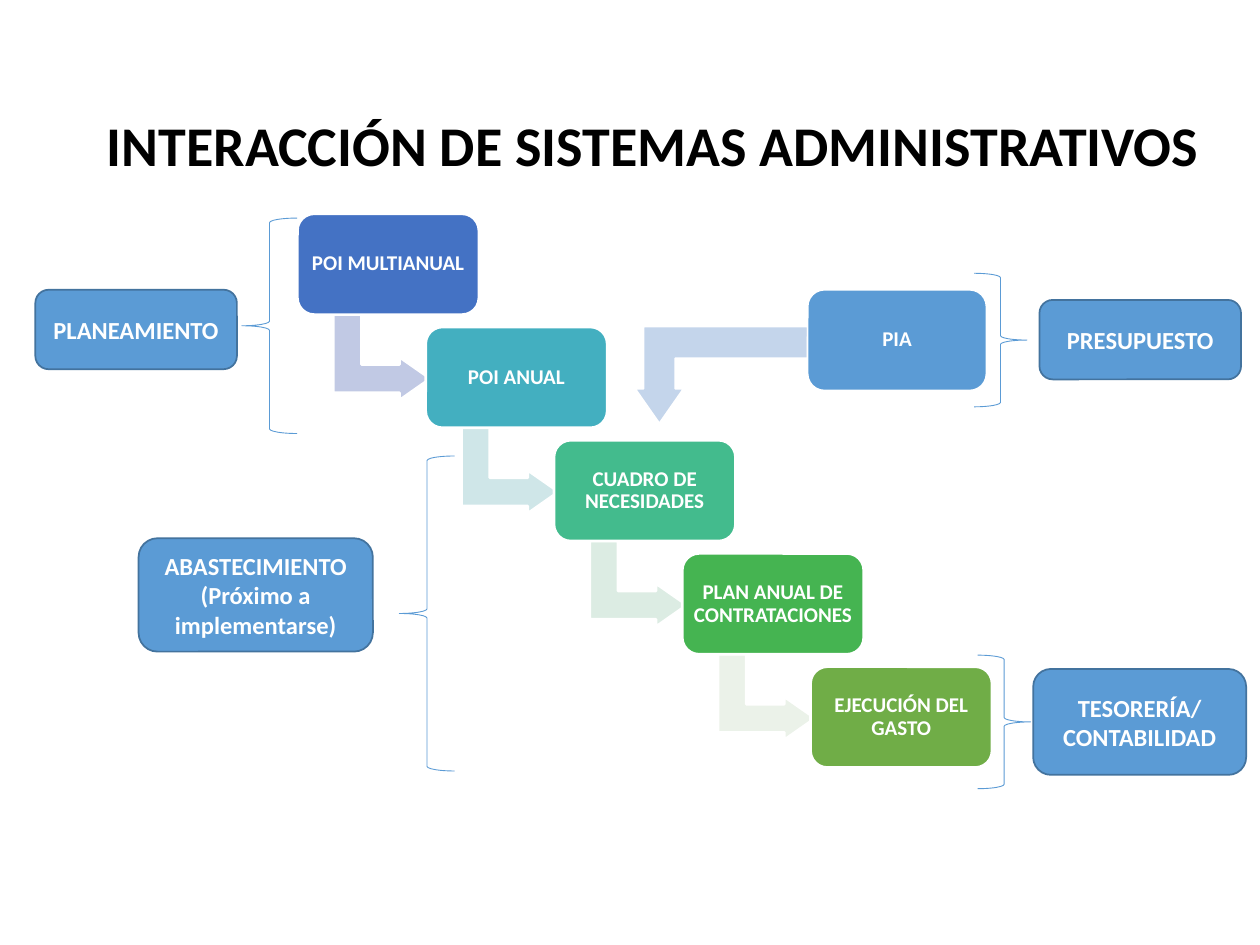
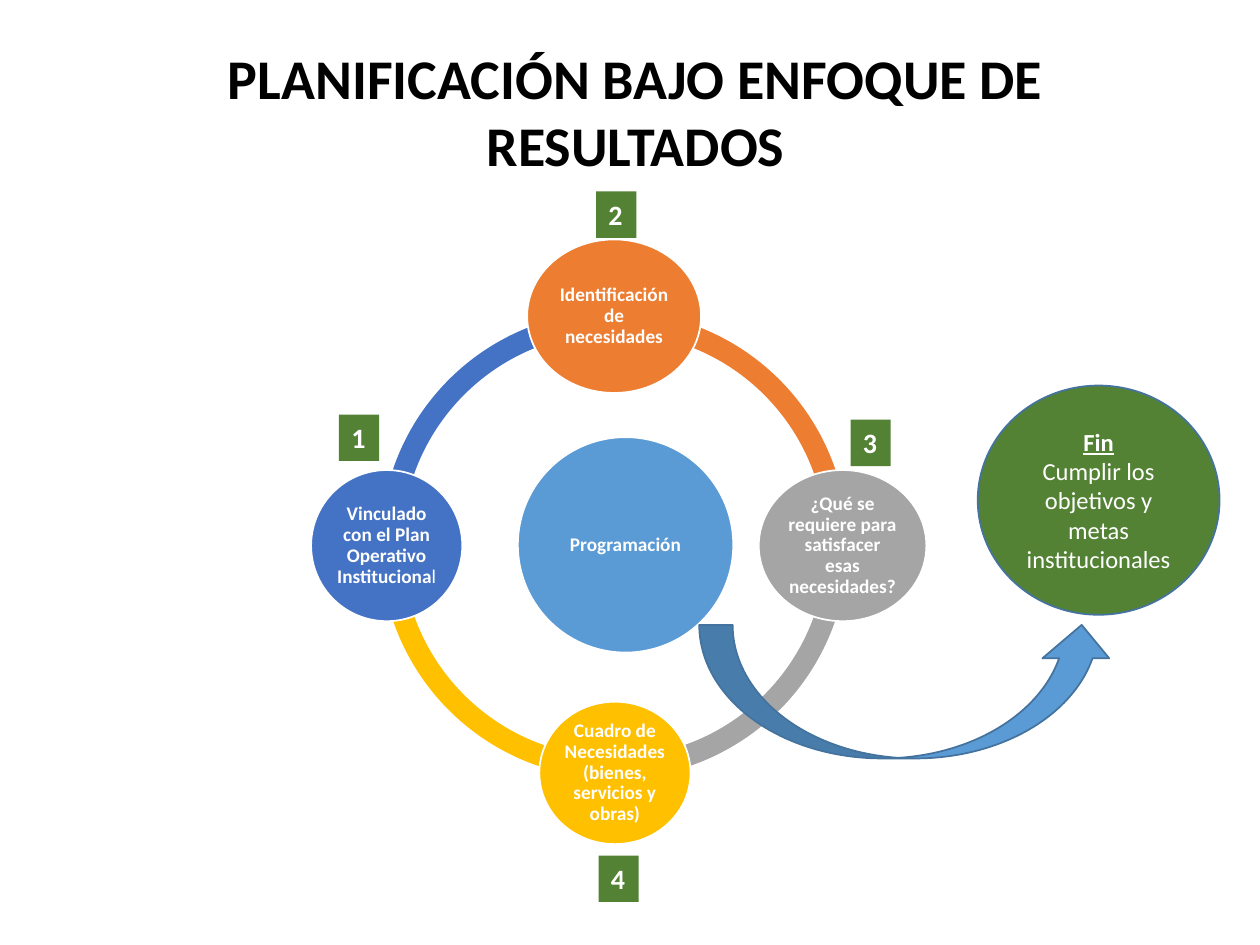
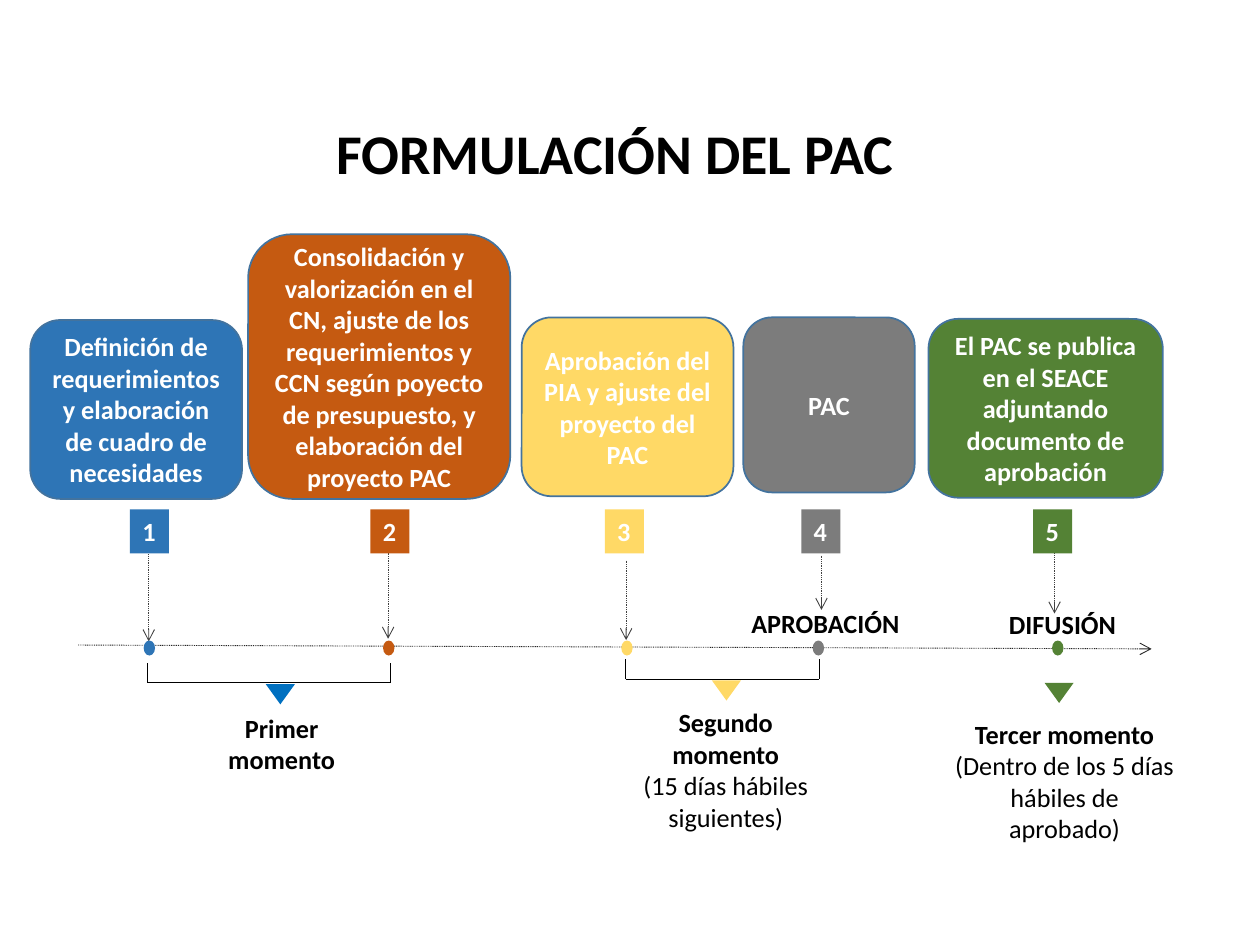
import dataclasses
from typing import Any, NamedTuple, Optional, Sequence, Union

import lxml.etree
import pptx
import pptx.dml.color
import pptx.enum.dml
import pptx.enum.shapes
import pptx.enum.text
import pptx.oxml.ns
import pptx.util

KIND = pptx.enum.shapes.MSO_SHAPE
ALIGN = pptx.enum.text.PP_ALIGN
ANCHOR = pptx.enum.text.MSO_ANCHOR
FIT = pptx.enum.text.MSO_AUTO_SIZE


@dataclasses.dataclass(frozen=True)
class Theme:
    font: str = "Calibri"
    black: str = "000000"
    white: str = "FFFFFF"
    sky: str = "5B9BD5"
    edge: str = "43739E"
    blue: str = "4472C4"
    teal: str = "43AFC0"
    mint: str = "43BB8D"
    leaf: str = "45B451"
    grass: str = "70AD47"
    orange: str = "ED7D31"
    gold: str = "FFC000"
    grey: str = "A5A5A5"
    green: str = "548235"
    navy: str = "2E75B6"
    rust: str = "C55A11"
    sand: str = "FFD966"
    stone: str = "7C7C7C"
    azure: str = "0070C0"
    axis: str = "262626"
    drop: str = "404040"
    pale_blue: str = "C4D5EB"
    pales: tuple = ("C1C9E4", "CFE6E8", "DCECE3", "EBF2E9")
    title: float = 32
    badge: float = 16
    body: float = 15
    group: float = 14
    node: float = 12
    ring: float = 11


T = Theme()


class Box(NamedTuple):
    x: float
    y: float
    w: float
    h: float


class Run(NamedTuple):
    text: str
    bold: bool = True
    under: bool = False


Text = Union[str, Sequence[Sequence[Run]]]


@dataclasses.dataclass(frozen=True)
class Style:
    size: float
    color: str = T.white
    align: Any = ALIGN.CENTER
    anchor: Any = ANCHOR.MIDDLE
    fit: Any = FIT.NONE
    wrap: bool = True
    space: float = 1.0
    pad: tuple = (7.2, 3.6)


TITLE = Style(T.title, T.black, anchor=ANCHOR.BOTTOM)
GROUP = Style(T.group)
NODE = Style(T.node, space=0.9, pad=(3.6, 3.6))
RING = Style(T.ring, space=0.9, pad=(1.44, 1.44))
STEP = Style(T.body)
NOTE = Style(T.body, T.black, anchor=ANCHOR.TOP, fit=FIT.SHAPE_TO_FIT_TEXT)
LABEL = dataclasses.replace(NOTE, align=ALIGN.LEFT, wrap=False)
BADGE = dataclasses.replace(LABEL, size=T.badge, color=T.white)
MARK = dataclasses.replace(BADGE, size=T.body)


class Step(NamedTuple):
    text: str
    fill: str
    box: Box
    badge: float
    dot: float
    drop: tuple[float, float, float]


class Moment(NamedTuple):
    text: Text
    fill: str
    box: Box
    tip: tuple[float, float]
    span: Optional[tuple[float, float, float]] = None


def tint(color: str) -> pptx.dml.color.RGBColor:
    return pptx.dml.color.RGBColor.from_string(color)


def format_all(item: Any, values: dict[str, Any]) -> None:
    for key, value in values.items():
        setattr(item, key, value)


def place(item: Any, box: Box) -> None:
    names = ("left", "top", "width", "height")
    format_all(item, {n: pptx.util.Pt(v) for n, v in zip(names, box)})


def write(shape: Any, text: Text, style: Style) -> None:
    frame = shape.text_frame
    side, end = map(pptx.util.Pt, style.pad)
    format_all(frame, {
        "word_wrap": style.wrap, "auto_size": style.fit,
        "vertical_anchor": style.anchor,
        "margin_left": side, "margin_right": side,
        "margin_top": end, "margin_bottom": end,
    })
    paras = [[Run(text)]] if isinstance(text, str) else text
    for i, runs in enumerate(paras):
        para = frame.add_paragraph() if i else frame.paragraphs[0]
        format_all(para, {"alignment": style.align, "line_spacing": style.space})
        for part in runs:
            run = para.add_run()
            run.text = part.text
            format_all(run.font, {
                "name": T.font, "size": pptx.util.Pt(style.size),
                "bold": part.bold, "underline": part.under,
            })
            run.font.color.rgb = tint(style.color)


def draw(slide: Any, kind: Any, box: Box, fill: Optional[str] = None,
         line: Optional[str] = None, width: float = 1, turn: float = 0,
         adjust: Sequence[float] = (), text: Text = "",
         style: Style = GROUP) -> None:
    shape = slide.shapes.add_shape(kind, *map(pptx.util.Pt, box))
    shape.shadow.inherit = False
    shape.rotation = turn
    for i, value in enumerate(adjust):
        shape.adjustments[i] = value
    if fill:
        shape.fill.solid()
        shape.fill.fore_color.rgb = tint(fill)
    else:
        shape.fill.background()
    if line:
        shape.line.color.rgb = tint(line)
        shape.line.width = pptx.util.Pt(width)
    else:
        shape.line.fill.background()
    if text:
        write(shape, text, style)


def label(slide: Any, box: Box, text: Text, style: Style) -> None:
    write(slide.shapes.add_textbox(*map(pptx.util.Pt, box)), text, style)


def link(slide: Any, x1: float, y1: float, x2: float, y2: float,
         color: str, arrow: bool = False) -> None:
    """Draw a thin line; an arrow is dotted and has an open head."""
    item = slide.shapes.add_connector(
        pptx.enum.shapes.MSO_CONNECTOR.STRAIGHT,
        *map(pptx.util.Pt, (x1, y1, x2, y2)))
    item.line.color.rgb = tint(color)
    item.line.width = pptx.util.Pt(0.5)
    name = pptx.oxml.ns.qn
    if arrow:
        item.line.dash_style = pptx.enum.dml.MSO_LINE.ROUND_DOT
        stroke = item.line._get_or_add_ln()
        lxml.etree.SubElement(stroke, name("a:tailEnd"), type="arrow")
    lxml.etree.SubElement(item._element.spPr, name("a:effectLst"))


def start(deck: Any, text: str, box: Box) -> Any:
    slide = deck.slides.add_slide(deck.slide_layouts[5])
    place(slide.shapes.title, box)
    write(slide.shapes.title, text, TITLE)
    return slide


def add_systems(deck: Any) -> None:
    slide = start(deck, "INTERACCIÓN DE SISTEMAS ADMINISTRATIVOS",
                  Box(39.6, 68.4, 667.4, 36.7))
    bend = (0.328, 0.25, 0.358)
    nodes = (
        ("POI MULTIANUAL", T.blue), ("POI ANUAL", T.teal),
        ("CUADRO DE NECESIDADES", T.mint),
        ("PLAN ANUAL DE CONTRATACIONES", T.leaf),
        ("EJECUCIÓN DEL GASTO", T.grass),
    )
    for i, (text, fill) in enumerate(nodes):
        x, y = 170 + 73.3 * i, 122.2 + 64.7 * i
        if i < len(T.pales):
            draw(slide, KIND.BENT_UP_ARROW, Box(x + 23.6, y + 54.2, 49, 55.4),
                 T.pales[i], T.white, 1.5, 90, bend)
        draw(slide, KIND.ROUNDED_RECTANGLE, Box(x, y, 103.7, 57.6), fill,
             T.white, 1.5, text=text, style=NODE)
    draw(slide, KIND.BENT_UP_ARROW, Box(362.9, 186.5, 98.6, 55.4),
         T.pale_blue, T.white, turn=180, adjust=bend)
    draw(slide, KIND.ROUNDED_RECTANGLE, Box(461.5, 165.6, 102.2, 57.6), T.sky,
         T.white, text="PIA", style=NODE)

    braces = (
        (KIND.LEFT_BRACE, Box(228.2, 260.6, 31.7, 180)),
        (KIND.RIGHT_BRACE, Box(556.6, 156.2, 30.2, 76.3)),
        (KIND.RIGHT_BRACE, Box(558.7, 374.4, 30.2, 76.3)),
        (KIND.LEFT_BRACE, Box(138.2, 124.6, 31.7, 123.1)),
    )
    for kind, box in braces:
        draw(slide, kind, box, line=T.sky, width=0.5)

    groups = (
        ("PLANEAMIENTO", Box(20.2, 165.6, 115.2, 45.4)),
        ("ABASTECIMIENTO (Próximo a implementarse)",
         Box(79.2, 307.6, 133.9, 64.8)),
        ("PRESUPUESTO", Box(594, 171.4, 115.2, 45.4)),
        ([[Run("TESORERÍA/")], [Run("CONTABILIDAD")]],
         Box(590.4, 382.3, 121.7, 60.5)),
    )
    for text, box in groups:
        draw(slide, KIND.ROUNDED_RECTANGLE, box, T.sky, T.edge, text=text)


def add_cycle(deck: Any) -> None:
    slide = start(deck, "PLANIFICACIÓN BAJO ENFOQUE DE RESULTADOS",
                  Box(39.6, 68.4, 647.3, 36.7))
    # An angle adjustment counts 0.6 per degree.
    for i, fill in enumerate((T.grey, T.gold, T.blue, T.orange)):
        draw(slide, KIND.BLOCK_ARC, Box(217.4, 177.8, 267.1, 267.1), fill,
             adjust=(54 * i, 54 * (i + 1) % 216, 0.046))
    discs = (
        ("Programación", T.sky, Box(295.9, 249.8, 123.1, 123.1)),
        ("Identificación de necesidades", T.orange,
         Box(301.2, 136.8, 99.4, 87.8)),
        ("¿Qué se requiere para satisfacer esas necesidades?", T.grey,
         Box(433.6, 268.6, 95.8, 86.4)),
        ("Cuadro de Necesidades (bienes, servicios y obras)", T.gold,
         Box(308.2, 401, 86.4, 81.4)),
        ([[Run("Vinculado con el Plan Operativo Instituciona"),
           Run("l", False)]], T.blue, Box(177.8, 268.6, 86.4, 86.4)),
    )
    for text, fill, box in discs:
        draw(slide, KIND.OVAL, box, fill, T.white, text=text, style=RING)
    draw(slide, KIND.CURVED_UP_ARROW, Box(399.6, 357.1, 237.6, 76.3),
         T.sky, T.edge)
    goal = [[Run("Fin", under=True)],
            [Run("Cumplir los objetivos y metas institucionales", False)]]
    draw(slide, KIND.OVAL, Box(558.7, 220.3, 138.2, 131), T.green, T.edge,
         text=goal)
    spots = ((193.7, 236.9), (340.6, 109.4), (486, 239.8), (342, 488.9))
    for i, (x, y) in enumerate(spots, 1):
        draw(slide, KIND.RECTANGLE, Box(x, y, 23, 26.6), T.green,
             text=str(i), style=BADGE)


def add_stages(deck: Any) -> None:
    slide = start(deck, "FORMULACIÓN DEL PAC", Box(56.9, 63.4, 589, 46.1))
    link(slide, 44.6, 368.6, 658.1, 370.8, T.axis, True)
    steps = (
        Step("Definición de requerimientos y elaboración de cuadro de "
             "necesidades", T.navy, Box(17.3, 182.9, 121, 102.2),
             74.2, 82.1, (85, 316.8, 366.5)),
        Step("Consolidación y valorización en el CN, ajuste de los "
             "requerimientos y CCN según poyecto de presupuesto, y "
             "elaboración del proyecto PAC", T.rust,
             Box(141.8, 133.9, 149.8, 151.2),
             211.7, 218.9, (221.8, 309.6, 365)),
        Step("Aprobación del PIA y ajuste del proyecto del PAC", T.sand,
             Box(298.1, 181.4, 121, 102.2),
             345.6, 355, (357.8, 320.4, 365.8)),
        Step("PAC", T.stone, Box(424.8, 181.4, 97.9, 100),
             457.9, 464.4, (469.4, 317.5, 348.5)),
        Step("El PAC se publica en el SEACE adjuntando documento de "
             "aprobación", T.green, Box(530.6, 182.2, 133.9, 102.2),
             590.4, 601.2, (602.6, 313.2, 350.6)),
    )
    for i, step in enumerate(steps, 1):
        x, top, end = step.drop
        link(slide, x, top, x, end, T.drop, True)
        draw(slide, KIND.OVAL, Box(step.dot, 366, 6.5, 8.6), step.fill)
        draw(slide, KIND.RECTANGLE, Box(step.badge, 291, 22.3, 25.2),
             step.fill, text=str(i), style=MARK)
        draw(slide, KIND.ROUNDED_RECTANGLE, step.box, step.fill, T.edge,
             text=step.text, style=STEP)

    moments = (
        Moment("Primer momento", T.azure, Box(114.5, 403.2, 92.9, 43.9),
               (151.9, 391), (84.2, 223.2, 390.2)),
        Moment([[Run("Segundo momento")],
                [Run("(15 días hábiles siguientes)", False)]], T.sand,
               Box(356.4, 400.3, 116.6, 79.9), (406.8, 388.8),
               (357.5, 468, 388.1)),
        Moment([[Run("Tercer momento")],
                [Run("(Dentro de los 5 días hábiles de aprobado)", False)]],
               T.green, Box(537.8, 406.8, 141.1, 80.6), (596.9, 390.2)),
    )
    for item in moments:
        if item.span:
            left, right, base = item.span
            link(slide, left, base, right, base, T.black)
            for x in (left, right):
                link(slide, x, base, x, base - 11.5, T.black)
        draw(slide, KIND.ISOSCELES_TRIANGLE, Box(*item.tip, 16.6, 11.5),
             item.fill, turn=180)
        label(slide, item.box, item.text, NOTE)
    label(slide, Box(411.1, 343.4, 121, 25.2), "APROBACIÓN", NOTE)
    label(slide, Box(569.5, 344.2, 76.3, 25.2), "DIFUSIÓN", LABEL)


def main() -> None:
    deck = pptx.Presentation()
    deck.slide_width = pptx.util.Pt(720)
    deck.slide_height = pptx.util.Pt(540)
    for add in (add_systems, add_cycle, add_stages):
        add(deck)
    deck.save("out.pptx")


if __name__ == "__main__":
    main()
